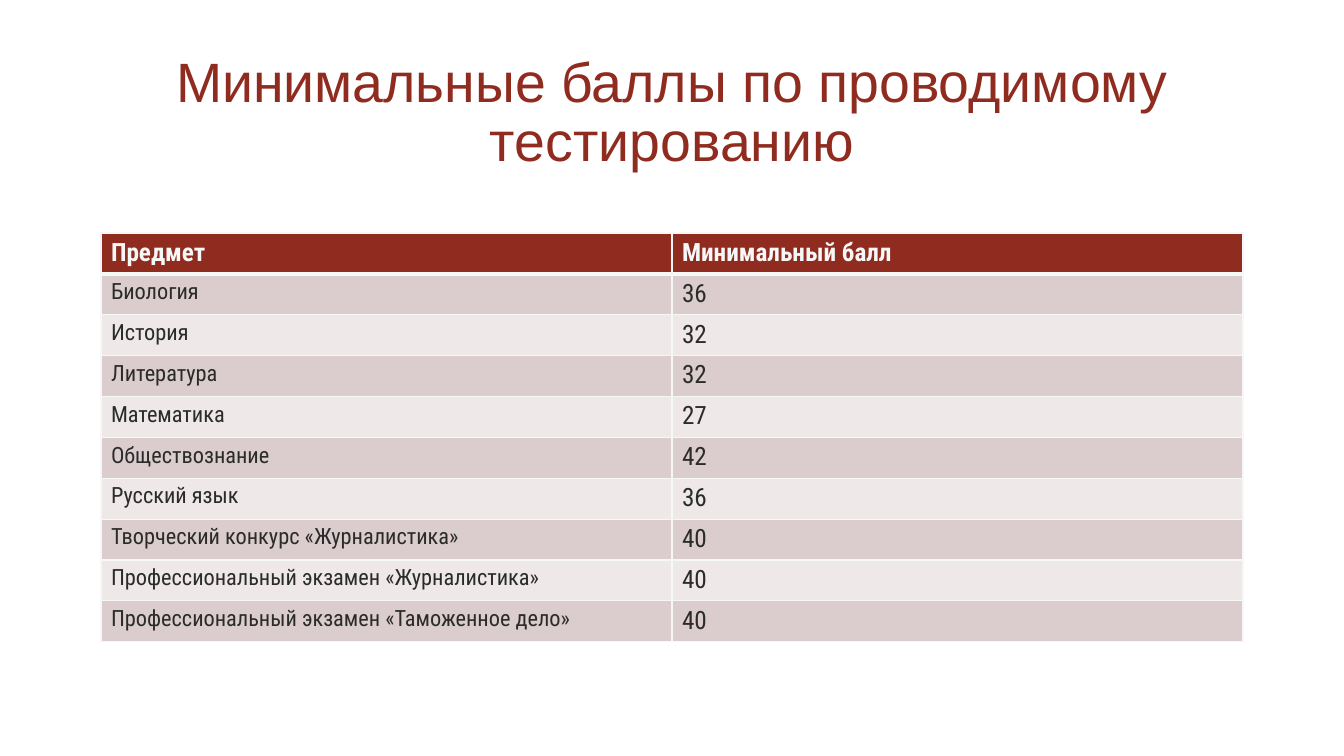
"""Build a slide with a table of minimum entrance test scores."""
from lxml import etree
from pptx import Presentation
from pptx.dml.color import RGBColor
from pptx.enum.text import MSO_ANCHOR, PP_ALIGN
from pptx.oxml.ns import qn
from pptx.util import Pt

CENTER = PP_ALIGN.CENTER
MIDDLE = MSO_ANCHOR.MIDDLE
EMU_PER_PX = 914400 / 100.8
THEME = {
    "accent": "902B20", "light": "F6F8F8", "dark": "2B2B2B",
    "bands": ("DBCDCD", "EEE8E8"),
    "title_font": "Arial", "table_font": "Roboto Condensed",
    "title_size": 39.6, "subject_size": 16, "score_size": 18,
    "thin": 1, "thick": 3,
}
HEADER = ("Предмет", "Минимальный балл")
SCORES = (
    ("Биология", 36),
    ("История", 32),
    ("Литература", 32),
    ("Математика", 27),
    ("Обществознание", 42),
    ("Русский язык", 36),
    ("Творческий конкурс «Журналистика»", 40),
    ("Профессиональный экзамен «Журналистика»", 40),
    ("Профессиональный экзамен «Таможенное дело»", 40),
)


def px(*lengths):
    return [round(length * EMU_PER_PX) for length in lengths]


def style_text(para, font, size, color, bold=False):
    for span in para.runs:
        span.font.name = font
        span.font.size = Pt(size)
        span.font.bold = bold
        span.font.color.rgb = RGBColor.from_string(color)


deck = Presentation()
deck.slide_width, deck.slide_height = px(1344, 756)
page = deck.slides.add_slide(deck.slide_layouts[6])

title = page.shapes.add_textbox(*px(101, 69, 1142, 90)).text_frame
title.word_wrap = True
title.vertical_anchor = MIDDLE
title.margin_left = title.margin_right = title.margin_top = title.margin_bottom = 0
title.text = "Минимальные баллы по проводимому тестированию"
heading = title.paragraphs[0]
heading.alignment = CENTER
heading.line_spacing = 0.9
style_text(heading, THEME["title_font"], THEME["title_size"], THEME["accent"])

rows = (HEADER, *SCORES)
table = page.shapes.add_table(len(rows), len(HEADER), *px(101, 233, 1142, 409)).table
table.first_row = True
table.horz_banding = False

for row_index, values in enumerate(rows):
    is_header = row_index == 0
    fill_color = THEME["accent"] if is_header else THEME["bands"][(row_index - 1) % 2]
    text_color = THEME["light"] if is_header else THEME["dark"]
    thick_side = {0: "lnB", 1: "lnT"}.get(row_index)
    for column_index, value in enumerate(values):
        cell = table.cell(row_index, column_index)
        cell.text_frame.text = str(value)
        is_subject = column_index == 0 and not is_header
        size = THEME["subject_size"] if is_subject else THEME["score_size"]
        para = cell.text_frame.paragraphs[0]
        style_text(para, THEME["table_font"], size, text_color, is_header)

        properties = cell._tc.get_or_add_tcPr()
        for side in ("lnL", "lnR", "lnT", "lnB"):
            width = THEME["thick"] if side == thick_side else THEME["thin"]
            border = etree.SubElement(properties, qn(f"a:{side}"), w=str(Pt(width)))
            paint = etree.SubElement(border, qn("a:solidFill"))
            etree.SubElement(paint, qn("a:srgbClr"), val=THEME["light"])
        cell.fill.solid()
        cell.fill.fore_color.rgb = RGBColor.from_string(fill_color)

deck.save("out.pptx")
